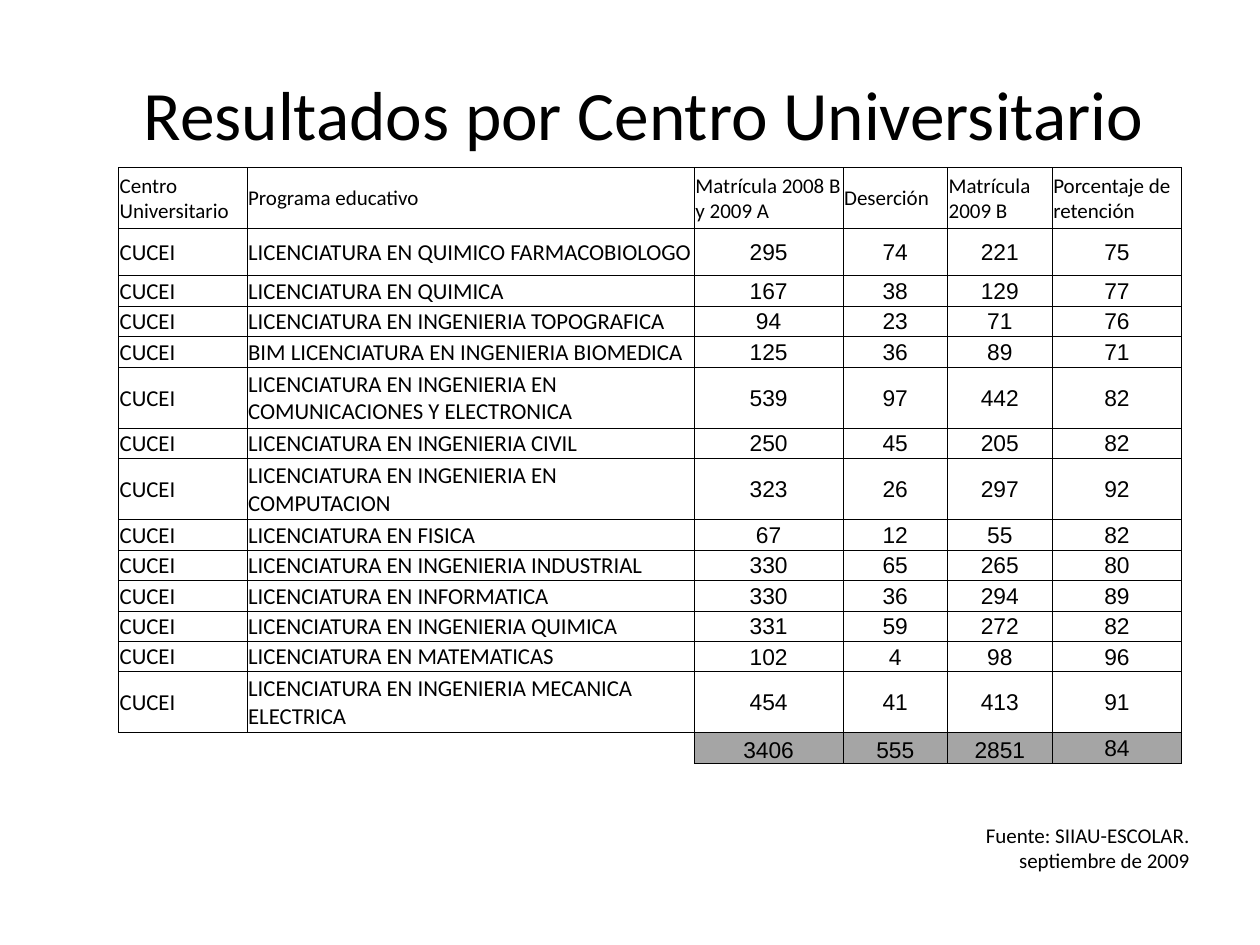
import lxml.etree
import pptx
import pptx.dml.color
import pptx.enum.text
import pptx.oxml.ns
import pptx.util

COLORS = {"ink": "000000", "paper": "FFFFFF", "total": "A5A5A5"}
ALIGN = pptx.enum.text.PP_ALIGN
ANCHOR = pptx.enum.text.MSO_ANCHOR
SLIDE_WIDTH, SLIDE_HEIGHT = 10, 7.5

HEADINGS = ["Centro Universitario", "Programa educativo", "Matrícula 2008 B y 2009 A",
            "Deserción", "Matrícula 2009 B", "Porcentaje de retención"]
CENTER = "CUCEI"
PROGRAMS = [
    ("LICENCIATURA EN QUIMICO FARMACOBIOLOGO", 295, 74, 221, 75),
    ("LICENCIATURA EN QUIMICA", 167, 38, 129, 77),
    ("LICENCIATURA EN INGENIERIA TOPOGRAFICA", 94, 23, 71, 76),
    ("BIM LICENCIATURA EN INGENIERIA BIOMEDICA", 125, 36, 89, 71),
    ("LICENCIATURA EN INGENIERIA EN COMUNICACIONES Y ELECTRONICA", 539, 97, 442, 82),
    ("LICENCIATURA EN INGENIERIA CIVIL", 250, 45, 205, 82),
    ("LICENCIATURA EN INGENIERIA EN COMPUTACION", 323, 26, 297, 92),
    ("LICENCIATURA EN FISICA", 67, 12, 55, 82),
    ("LICENCIATURA EN INGENIERIA INDUSTRIAL", 330, 65, 265, 80),
    ("LICENCIATURA EN INFORMATICA", 330, 36, 294, 89),
    ("LICENCIATURA EN INGENIERIA QUIMICA", 331, 59, 272, 82),
    ("LICENCIATURA EN MATEMATICAS", 102, 4, 98, 96),
    ("LICENCIATURA EN INGENIERIA MECANICA ELECTRICA", 454, 41, 413, 91),
]
TOTALS = ["", "", 3406, 555, 2851, 84]
COLUMN_SHARES = [1.02, 3.55, 1.18, 0.83, 0.83, 1.03]
ROW_LINES = [2, 1.55, 1, 1, 1, 2, 1, 2, 1, 1, 1, 1, 1, 2, 1]


def rgb(name):
    return pptx.dml.color.RGBColor.from_string(COLORS[name])


def inches(box):
    return [pptx.util.Inches(length) for length in box]


def format_text(frame, size, font, align):
    for paragraph in frame.paragraphs:
        paragraph.alignment = align
        for run in paragraph.runs:
            run.font.size = pptx.util.Pt(size)
            run.font.name = font
            run.font.color.rgb = rgb("ink")


def add_title(slide, box):
    title = slide.shapes.title
    title.left, title.top, title.width, title.height = inches(box)
    title.text_frame.text = "Resultados por Centro Universitario"
    title.text_frame.vertical_anchor = ANCHOR.MIDDLE
    format_text(title.text_frame, 39.6, "Calibri", ALIGN.CENTER)


def add_source_note(slide, box):
    note = slide.shapes.add_textbox(*inches(box)).text_frame
    note.word_wrap = True
    note.text = "Fuente: SIIAU-ESCOLAR.\nseptiembre de 2009"
    format_text(note, 12, "Calibri", ALIGN.RIGHT)


def set_borders(cell, visible_sides):
    """Draw the given sides (letters of LRTB) and clear the others."""
    properties = cell._tc.get_or_add_tcPr()
    for side in "LRTB":
        line = lxml.etree.SubElement(properties, pptx.oxml.ns.qn(f"a:ln{side}"), w="6350")
        if side in visible_sides:
            fill = lxml.etree.SubElement(line, pptx.oxml.ns.qn("a:solidFill"))
            lxml.etree.SubElement(fill, pptx.oxml.ns.qn("a:srgbClr"), val=COLORS["ink"])
        else:
            lxml.etree.SubElement(line, pptx.oxml.ns.qn("a:noFill"))


def fill_cell(cell, value, is_heading, is_total):
    is_number = isinstance(value, int)
    cell.margin_left = cell.margin_right = cell.margin_top = pptx.util.Inches(0.01)
    cell.margin_bottom = 0
    cell.vertical_anchor = ANCHOR.MIDDLE
    cell.text_frame.text = str(value)
    format_text(cell.text_frame, 12 if is_heading else 13,
                "Arial" if is_number else "Calibri",
                ALIGN.CENTER if is_number else ALIGN.LEFT)
    if value == "":
        # An empty cell would otherwise stretch its row to the default text size.
        paragraph = cell.text_frame.paragraphs[0]._p
        lxml.etree.SubElement(paragraph, pptx.oxml.ns.qn("a:endParaRPr"), sz="1300")
        set_borders(cell, "T")
        cell.fill.background()
        return
    set_borders(cell, "LRTB")
    cell.fill.solid()
    cell.fill.fore_color.rgb = rgb("total" if is_total else "paper")


def add_results_table(slide, box):
    rows = [HEADINGS, *([CENTER, *program] for program in PROGRAMS), TOTALS]
    table = slide.shapes.add_table(len(rows), len(HEADINGS), *inches(box)).table
    table.first_row = table.horz_banding = False
    width, height = box[2:]
    for column, share in zip(table.columns, COLUMN_SHARES):
        column.width = pptx.util.Inches(width * share / sum(COLUMN_SHARES))
    for row, lines in zip(table.rows, ROW_LINES):
        row.height = pptx.util.Inches(height * lines / sum(ROW_LINES))
    last = len(rows) - 1
    for r, values in enumerate(rows):
        for c, value in enumerate(values):
            fill_cell(table.cell(r, c), value, r == 0, r == last)
    set_total_anchors = range(2, len(HEADINGS) - 1)
    for c in set_total_anchors:
        table.cell(last, c).vertical_anchor = ANCHOR.BOTTOM
    # The first total keeps its left edge, shared with the empty cell beside it.
    edge = table.cell(last, 1)._tc.tcPr.find(pptx.oxml.ns.qn("a:lnR"))
    shown = table.cell(last, 2)._tc.tcPr.find(pptx.oxml.ns.qn("a:lnR"))
    edge[:] = [lxml.etree.fromstring(lxml.etree.tostring(part)) for part in shown]


def main():
    deck = pptx.Presentation()
    deck.slide_width, deck.slide_height = inches((SLIDE_WIDTH, SLIDE_HEIGHT))
    slide = deck.slides.add_slide(deck.slide_layouts[5])
    add_title(slide, (0.86, 0.31, 8.5, 1.17))
    add_source_note(slide, (6.95, 6.48, 2.59, 0.5))
    add_results_table(slide, (0.94, 1.33, 8.44, 4.73))
    deck.save("out.pptx")


if __name__ == "__main__":
    main()
